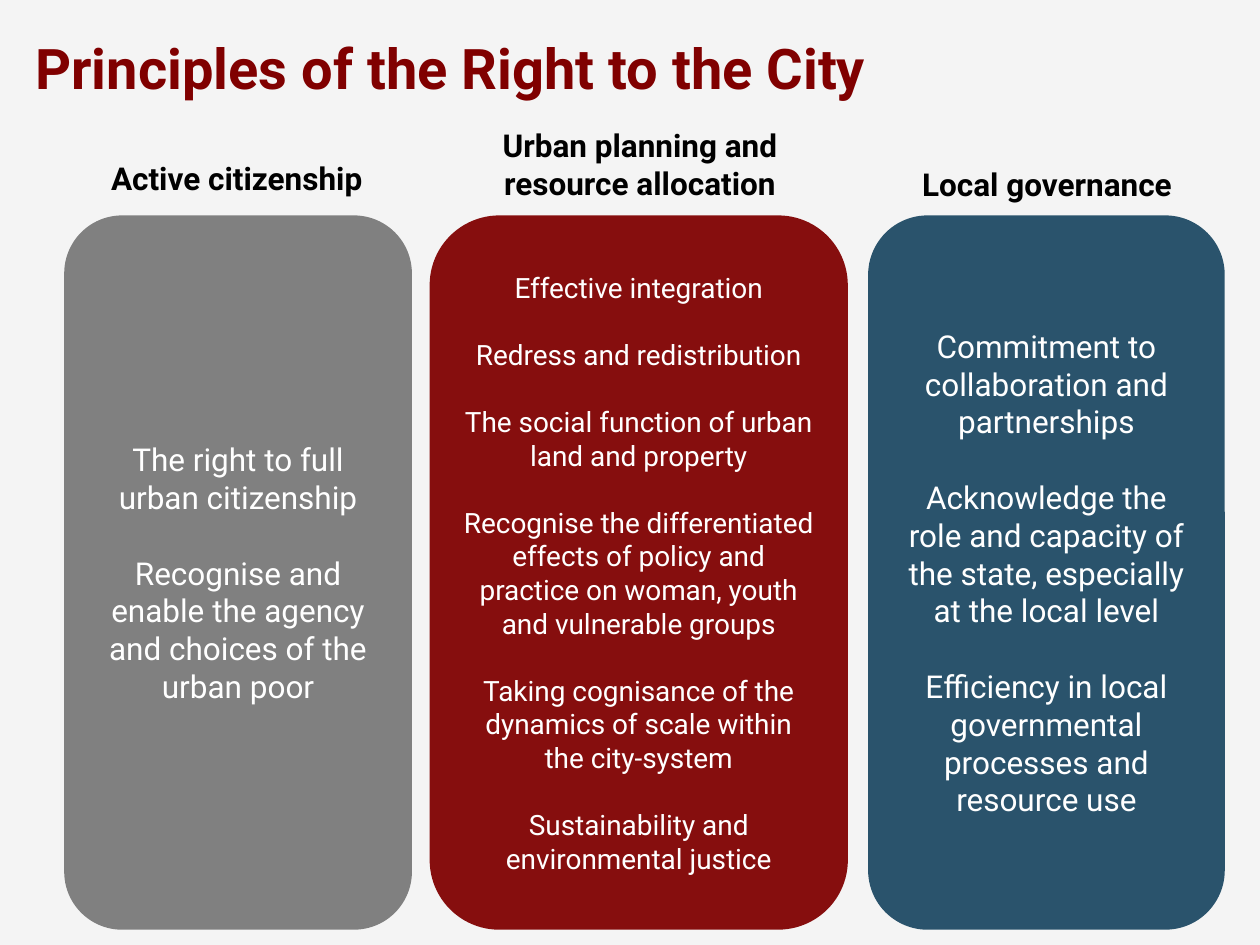
from lxml import etree
from pptx import Presentation
from pptx.dml.color import RGBColor
from pptx.enum import shapes, text
from pptx.oxml import ns
from pptx.util import Pt

FONT = "Roboto"
BACKGROUND = RGBColor(0xF4, 0xF4, 0xF4)
MAROON = RGBColor(0x80, 0x00, 0x00)
GREY = RGBColor(0x80, 0x80, 0x80)
BLUE = RGBColor(0x2A, 0x53, 0x6C)
WHITE = RGBColor(0xFF, 0xFF, 0xFF)
BLACK = RGBColor(0x00, 0x00, 0x00)

PANEL_TOP, PANEL_HEIGHT = 123.1, 408.2
HEADING_WIDTH = 181.4
LINE_HEIGHT = 1.2

# Panels: heading, heading left/top/height, panel left/width, fill, opacity, size, principles
PANELS = [
    ("Urban planning and resource allocation", 275, 68.4, 51.1,
     245.5, 239, MAROON, 94, 16,
     ["Effective integration",
      "Redress and redistribution",
      "The social function of urban land and property",
      "Recognise the differentiated effects of policy and practice on woman, "
      "youth and vulnerable groups",
      "Taking cognisance of the dynamics of scale within the city-system",
      "Sustainability and environmental justice"]),
    ("Active citizenship", 44.6, 87.1, 28.8,
     36.7, 198.7, GREY, 100, 18,
     ["The right to full urban citizenship",
      "Recognise and enable the agency and choices of the urban poor"]),
    ("Local governance", 507.6, 90.7, 28.8,
     496.1, 203.8, BLUE, 100, 18,
     ["Commitment to collaboration and partnerships",
      "Acknowledge the role and capacity of the state, especially at the local level",
      "Efficiency in local governmental processes and resource use"]),
]


def write(box, lines, align, color, size, bold=False):
    """Fill a shape with paragraphs set one line apart."""
    frame = box.text_frame
    frame.word_wrap = True
    for index, line in enumerate(lines):
        para = frame.paragraphs[0] if index == 0 else frame.add_paragraph()
        para.alignment = align
        if index:
            para.space_before = Pt(size * LINE_HEIGHT)
        span = para.add_run()
        span.text = line
        span.font.color.rgb = color
        for name, value in {"name": FONT, "size": Pt(size), "bold": bold}.items():
            setattr(span.font, name, value)
    return frame


deck = Presentation()
deck.slide_width, deck.slide_height = Pt(720), Pt(540)
page = deck.slides.add_slide(deck.slide_layouts[5])
page.background.fill.solid()
page.background.fill.fore_color.rgb = BACKGROUND

# Title
title = page.shapes.title
place = {"left": Pt(13), "top": Pt(2.9), "width": Pt(581), "height": Pt(70.6)}
for name, value in place.items():
    setattr(title, name, value)
frame = write(title, ["Principles of the Right to the City"],
              text.PP_ALIGN.LEFT, MAROON, 32, bold=True)
frame.vertical_anchor = text.MSO_ANCHOR.MIDDLE
frame.auto_size = text.MSO_AUTO_SIZE.NONE

# Rounded panels with their principles
for _, _, _, _, left, width, color, opacity, size, principles in PANELS:
    panel = page.shapes.add_shape(shapes.MSO_SHAPE.ROUNDED_RECTANGLE, Pt(left),
                                  Pt(PANEL_TOP), Pt(width), Pt(PANEL_HEIGHT))
    panel.shadow.inherit = False
    panel.line.fill.background()
    panel.fill.solid()
    panel.fill.fore_color.rgb = color
    if opacity < 100:
        tint = panel.element.spPr.find(".//" + ns.qn("a:srgbClr"))
        etree.SubElement(tint, ns.qn("a:alpha"), val=str(opacity * 1000))
    frame = write(panel, principles, text.PP_ALIGN.CENTER, WHITE, size)
    frame.vertical_anchor = text.MSO_ANCHOR.MIDDLE

# Headings above the panels
for heading, left, top, height, *_ in PANELS:
    box = page.shapes.add_textbox(Pt(left), Pt(top), Pt(HEADING_WIDTH), Pt(height))
    frame = write(box, [heading], text.PP_ALIGN.CENTER, BLACK, 18, bold=True)
    frame.auto_size = text.MSO_AUTO_SIZE.SHAPE_TO_FIT_TEXT

deck.save("out.pptx")
